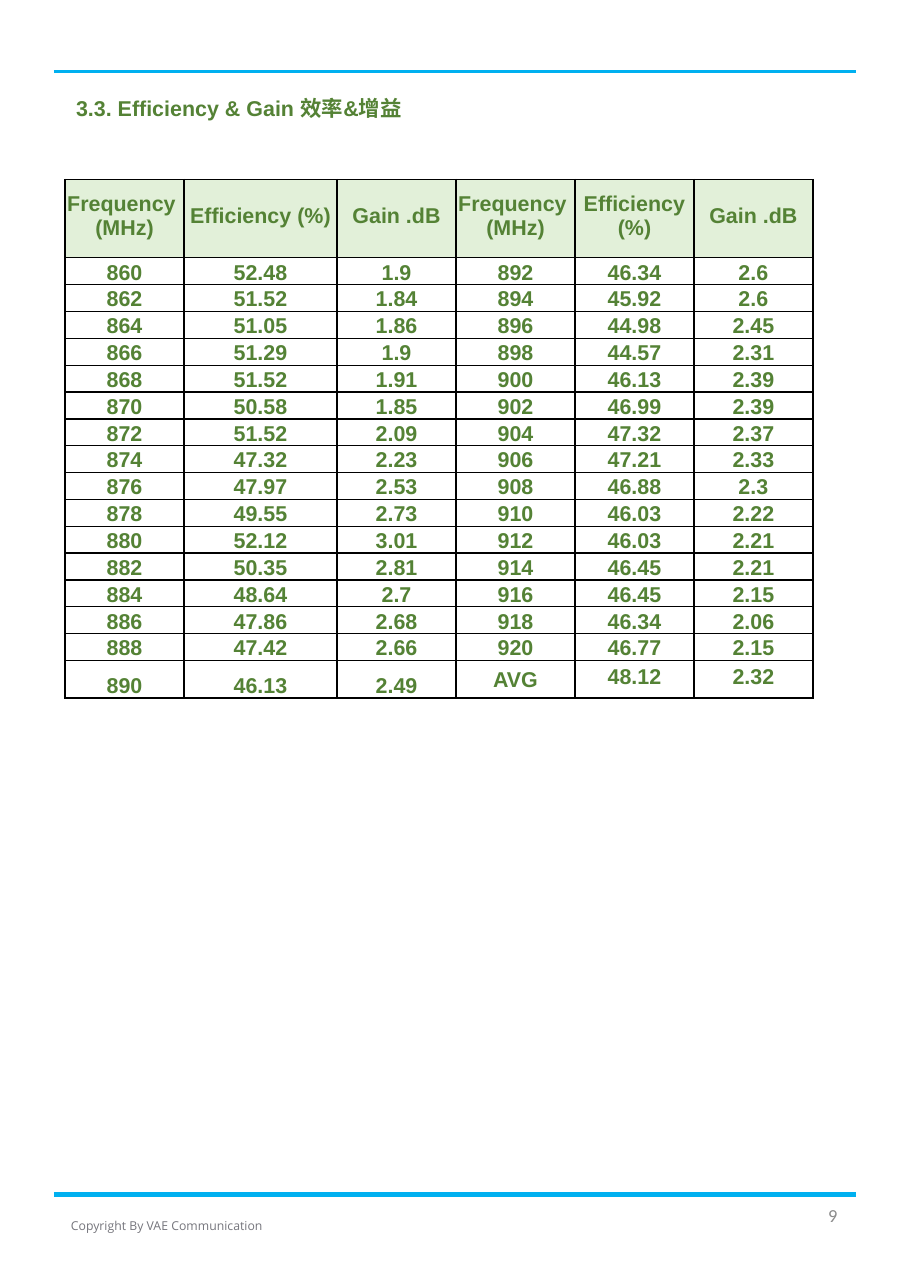
from dataclasses import dataclass

from lxml import etree
from pptx import Presentation
from pptx.dml.color import RGBColor
from pptx.enum.shapes import MSO_CONNECTOR
from pptx.enum.text import MSO_ANCHOR, PP_ALIGN
from pptx.oxml.ns import qn
from pptx.slide import Slide
from pptx.table import _Cell
from pptx.text.text import TextFrame
from pptx.util import Inches, Pt

STRAIGHT = MSO_CONNECTOR.STRAIGHT
TOP, MIDDLE, BOTTOM = MSO_ANCHOR.TOP, MSO_ANCHOR.MIDDLE, MSO_ANCHOR.BOTTOM
LEFT, CENTER, RIGHT = PP_ALIGN.LEFT, PP_ALIGN.CENTER, PP_ALIGN.RIGHT
TITLE_ONLY = 5


@dataclass(frozen=True)
class TextStyle:
    font: str
    size: float
    color: str
    bold: bool = False


@dataclass(frozen=True)
class Theme:
    rule: str = "00B0F0"
    header_fill: str = "E2F0D9"
    border: str = "000000"
    border_pt: float = 1
    main: TextStyle = TextStyle("Arial", 14, "548235", True)
    page: TextStyle = TextStyle("Calibri", 12, "8C8C8C")
    copyright: TextStyle = TextStyle("Open Sans", 8, "75757C")


@dataclass(frozen=True)
class Rule:
    y: float
    weight: float


@dataclass(frozen=True)
class Label:
    text: str
    box: tuple[float, float, float, float]
    align: PP_ALIGN
    style: TextStyle


THEME = Theme()
RULE_LEFT, RULE_RIGHT = 0.49, 7.77
RULES = [Rule(0.65, 1.5), Rule(10.84, 3)]
TITLE = Label("3.3. Efficiency & Gain 效率&增益", (0.59, 0.81, 4.14, 0.34), LEFT, THEME.main)
FOOTERS = [
    Label("9", (5.94, 10.84, 1.76, 0.38), RIGHT, THEME.page),
    Label("Copyright By VAE Communication", (0.34, 10.93, 2.35, 0.38), CENTER, THEME.copyright),
]

TABLE_BOX = (0.59, 1.63, 6.78, 4.71)
COLUMN_WIDTHS = [1.08, 1.39, 1.08, 1.08, 1.08, 1.08]
HEADER_HEIGHT, LAST_HEIGHT = 0.71, 0.34
HEADERS = ["Frequency \v(MHz)", "Efficiency (%)", "Gain .dB"] * 2
FIRST_MHZ, STEP_MHZ = 860, 2
# Efficiency and gain at successive frequencies, then their averages
MEASUREMENTS = [
    ("52.48", "1.9"), ("51.52", "1.84"), ("51.05", "1.86"), ("51.29", "1.9"),
    ("51.52", "1.91"), ("50.58", "1.85"), ("51.52", "2.09"), ("47.32", "2.23"),
    ("47.97", "2.53"), ("49.55", "2.73"), ("52.12", "3.01"), ("50.35", "2.81"),
    ("48.64", "2.7"), ("47.86", "2.68"), ("47.42", "2.66"), ("46.13", "2.49"),
    ("46.34", "2.6"), ("45.92", "2.6"), ("44.98", "2.45"), ("44.57", "2.31"),
    ("46.13", "2.39"), ("46.99", "2.39"), ("47.32", "2.37"), ("47.21", "2.33"),
    ("46.88", "2.3"), ("46.03", "2.22"), ("46.03", "2.21"), ("46.45", "2.21"),
    ("46.45", "2.15"), ("46.34", "2.06"), ("46.77", "2.15"),
]
AVERAGE = ("AVG", "48.12", "2.32")


def table_rows() -> list[list[str]]:
    """Header row, then the first half of the readings beside the second half."""
    readings = [(str(FIRST_MHZ + STEP_MHZ * i), *m) for i, m in enumerate(MEASUREMENTS)]
    readings.append(AVERAGE)
    half = len(readings) // 2
    return [HEADERS] + [[*a, *b] for a, b in zip(readings[:half], readings[half:])]


def write(tf: TextFrame, text: str, align: PP_ALIGN, style: TextStyle) -> None:
    p = tf.paragraphs[0]
    p.text = text
    p.alignment = align
    p.font.name = style.font
    p.font.size = Pt(style.size)
    p.font.bold = style.bold
    p.font.color.rgb = RGBColor.from_string(style.color)


def add_rule(s: Slide, rule: Rule) -> None:
    y = Inches(rule.y)
    line = s.shapes.add_connector(STRAIGHT, Inches(RULE_LEFT), y, Inches(RULE_RIGHT), y)
    line.line.color.rgb = RGBColor.from_string(THEME.rule)
    line.line.width = Pt(rule.weight)
    etree.SubElement(line._element.spPr, qn("a:effectLst"))


def add_title(s: Slide, label: Label) -> None:
    sp = s.shapes.title
    sp.left, sp.top, sp.width, sp.height = map(Inches, label.box)
    tf = sp.text_frame
    tf.word_wrap = True
    tf.vertical_anchor = TOP
    write(tf, label.text, label.align, label.style)


def add_footer(s: Slide, label: Label) -> None:
    tf = s.shapes.add_textbox(*map(Inches, label.box)).text_frame
    tf.word_wrap = True
    tf.vertical_anchor = MIDDLE
    write(tf, label.text, label.align, label.style)


def add_borders(cell: _Cell) -> None:
    tc_pr = cell._tc.get_or_add_tcPr()
    for side in ("lnL", "lnR", "lnT", "lnB"):
        ln = etree.SubElement(tc_pr, qn(f"a:{side}"), w=str(Pt(THEME.border_pt)))
        fill = etree.SubElement(ln, qn("a:solidFill"))
        etree.SubElement(fill, qn("a:srgbClr"), val=THEME.border)


def format_cell(cell: _Cell, is_header: bool, is_average: bool, is_label: bool) -> None:
    cell.margin_left = cell.margin_right = cell.margin_top = Inches(0.01)
    raised = is_header or (is_average and not is_label)
    cell.margin_bottom = Inches(0.05 if raised else 0)
    cell.vertical_anchor = MIDDLE if is_header or is_average else BOTTOM
    add_borders(cell)
    if is_header:
        cell.fill.solid()
        cell.fill.fore_color.rgb = RGBColor.from_string(THEME.header_fill)
    else:
        cell.fill.background()


def add_readings_table(s: Slide) -> None:
    rows = table_rows()
    last = len(rows) - 1
    table = s.shapes.add_table(
        len(rows), len(HEADERS), *map(Inches, TABLE_BOX)).table
    table.first_row = table.horz_banding = False
    for column, width in zip(table.columns, COLUMN_WIDTHS):
        column.width = Inches(width)
    body_height = (TABLE_BOX[3] - HEADER_HEIGHT - LAST_HEIGHT) / (last - 1)
    for i, texts in enumerate(rows):
        height = {0: HEADER_HEIGHT, last: LAST_HEIGHT}.get(i, body_height)
        table.rows[i].height = Inches(height)
        for j, text in enumerate(texts):
            cell = table.cell(i, j)
            is_average = i == last and j >= len(AVERAGE)
            format_cell(cell, i == 0, is_average, text == AVERAGE[0])
            write(cell.text_frame, text, CENTER, THEME.main)


def main() -> None:
    prs = Presentation()
    prs.slide_width, prs.slide_height = Inches(8.27), Inches(11.69)
    s = prs.slides.add_slide(prs.slide_layouts[TITLE_ONLY])
    for rule in RULES:
        add_rule(s, rule)
    for footer in FOOTERS:
        add_footer(s, footer)
    add_title(s, TITLE)
    add_readings_table(s)
    prs.save("out.pptx")


if __name__ == "__main__":
    main()
